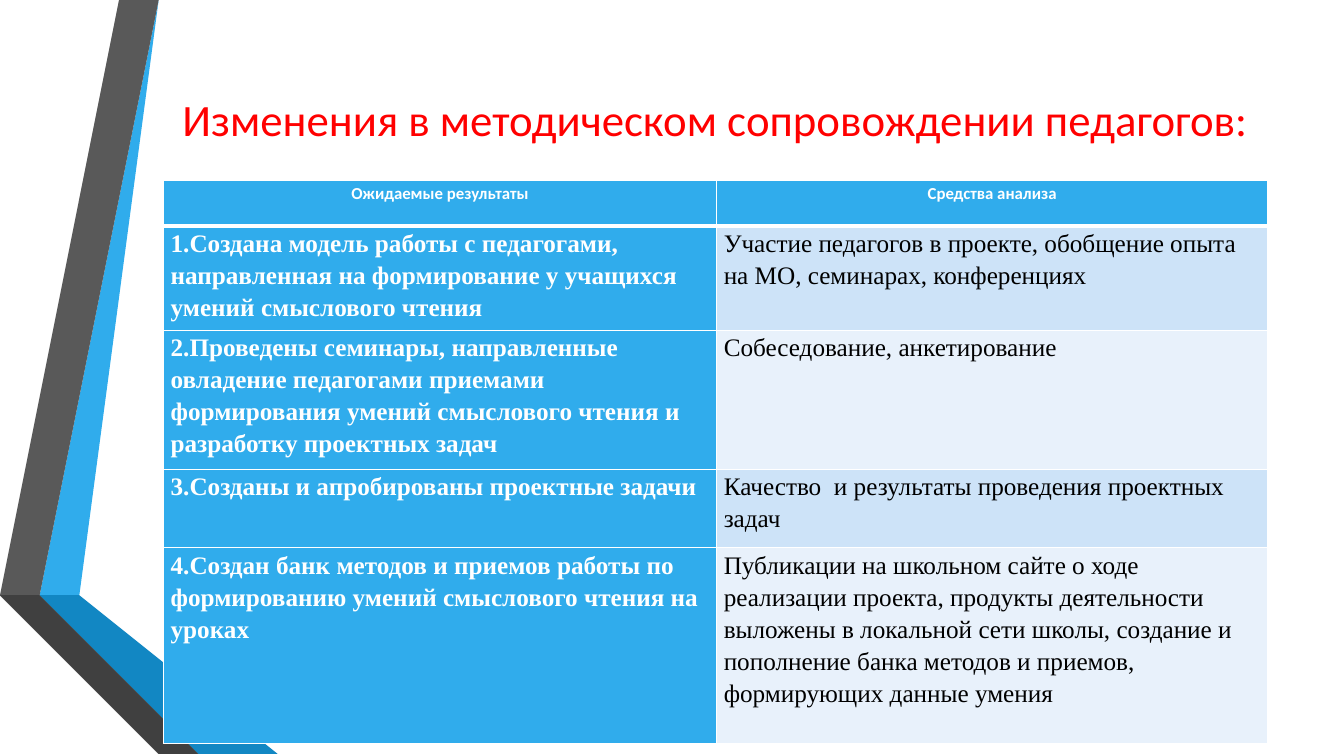
"""Build a slide with a table of expected results and means of analysis."""
from lxml.etree import SubElement
from pptx import Presentation
from pptx.dml.color import RGBColor
from pptx.enum.text import MSO_ANCHOR, PP_ALIGN
from pptx.oxml.ns import qn
from pptx.util import Cm, Pt

THEME = {
    "white": "FFFFFF", "black": "000000", "red": "FF0000",
    "blue": "30ACEC", "blue_mid": "1287C3", "blue_dark": "0C5A82",
    "grey": "595959", "grey_mid": "404040", "grey_dark": "262626",
    "bands": ("CDE3F8", "E8F1FB"),
    "sans": "Calibri", "serif": "Times New Roman",
    "title": 32, "head": 12, "body": 18,
}


def write(tf, text, font, size, color, bold=False, align=PP_ALIGN.LEFT, spacing=1.0):
    p = tf.paragraphs[0]
    p.alignment, p.line_spacing = align, spacing
    r = p.add_run()
    r.text = text
    for name, value in {"name": font, "size": Pt(size), "bold": bold}.items():
        setattr(r.font, name, value)
    r.font.color.rgb = RGBColor.from_string(color)


def add_border(cell, side, width):
    ln = SubElement(cell._tc.get_or_add_tcPr(), qn(f"a:{side}"), w=str(Pt(width)))
    SubElement(SubElement(ln, qn("a:solidFill")), qn("a:srgbClr"), val=THEME["white"])


prs = Presentation()
prs.slide_width, prs.slide_height = Cm(33.87), Cm(19.05)
s = prs.slides.add_slide(prs.slide_layouts[6])

ribbons = [
    ("blue", [(1.27, 14.68), (1.96, 14.81), (4.39, 0), (3.68, 0)]),
    ("grey", [(3.53, 0), (2.82, 0), (0.41, 14.55), (1.12, 14.66)]),
    ("grey_dark", [(0.41, 14.55), (3.68, 19.05), (3.84, 19.05)]),
    ("blue_dark", [(1.27, 14.71), (5.28, 19.05), (5.44, 19.05)]),
    ("blue_mid", [(1.27, 14.68), (5.44, 19.05), (7.19, 19.05), (1.96, 14.81)]),
    ("grey_mid", [(5.13, 19.05), (1.22, 14.81), (1.12, 14.66), (0.41, 14.55), (3.84, 19.05)]),
]
for color, points in ribbons:
    fb = s.shapes.build_freeform(*points[0], scale=Cm(1))
    fb.add_line_segments(points[1:], close=True)
    sp = fb.convert_to_shape()
    sp.shadow.inherit = False
    sp.fill.solid()
    sp.fill.fore_color.rgb = RGBColor.from_string(THEME[color])
    sp.line.fill.background()

left, width = Cm(4.12), Cm(27.83)
tf = s.shapes.add_textbox(left, Cm(1.9), width, Cm(2.18)).text_frame
tf.word_wrap = True
tf.vertical_anchor = MSO_ANCHOR.MIDDLE
write(tf, "Изменения в методическом сопровождении педагогов:",
      THEME["sans"], THEME["title"], THEME["red"], align=PP_ALIGN.CENTER)

rows = [
    (1.14, "Ожидаемые результаты", "Средства анализа"),
    (2.41, "1.Создана модель работы с педагогами, направленная на формирование у учащихся "
     "умений смыслового чтения",
     "Участие педагогов в проекте, обобщение опыта на МО, семинарах, конференциях"),
    (3.45, "2.Проведены семинары, направленные овладение педагогами приемами формирования "
     "умений смыслового чтения и разработку проектных задач",
     "Собеседование, анкетирование"),
    (1.98, "3.Созданы и апробированы проектные задачи",
     "Качество  и результаты проведения проектных задач"),
    (4.93, "4.Создан банк методов и приемов работы по формированию умений смыслового чтения "
     "на уроках",
     "Публикации на школьном сайте о ходе реализации проекта, продукты деятельности выложены "
     "в локальной сети школы, создание и пополнение банка методов и приемов, формирующих "
     "данные умения"),
]
height = Cm(sum(row[0] for row in rows))
table = s.shapes.add_table(len(rows), 2, left, Cm(4.55), width, height).table
table.horz_banding = False
table.columns[0].width, table.columns[1].width = Cm(13.94), Cm(13.89)

cell_format = {"margin_left": Cm(0.18), "margin_right": Cm(0.18),
               "margin_top": 0, "margin_bottom": 0}
for i, (row_height, *texts) in enumerate(rows):
    table.rows[i].height = Cm(row_height)
    for j, text in enumerate(texts):
        cell = table.cell(i, j)
        for name, value in cell_format.items():
            setattr(cell, name, value)
        for side in ("lnL", "lnR", "lnT", "lnB"):
            thick = (i, side) in ((0, "lnB"), (1, "lnT"))
            add_border(cell, side, 3 if thick else 1)
        head = i == 0
        strong = head or j == 0
        fill = THEME["blue"] if strong else THEME["bands"][(i - 1) % 2]
        cell.fill.solid()
        cell.fill.fore_color.rgb = RGBColor.from_string(fill)
        write(cell.text_frame, text,
              THEME["sans" if head else "serif"], THEME["head" if head else "body"],
              THEME["white" if strong else "black"], strong,
              PP_ALIGN.CENTER if head else PP_ALIGN.LEFT, 1.15)

prs.save("out.pptx")
